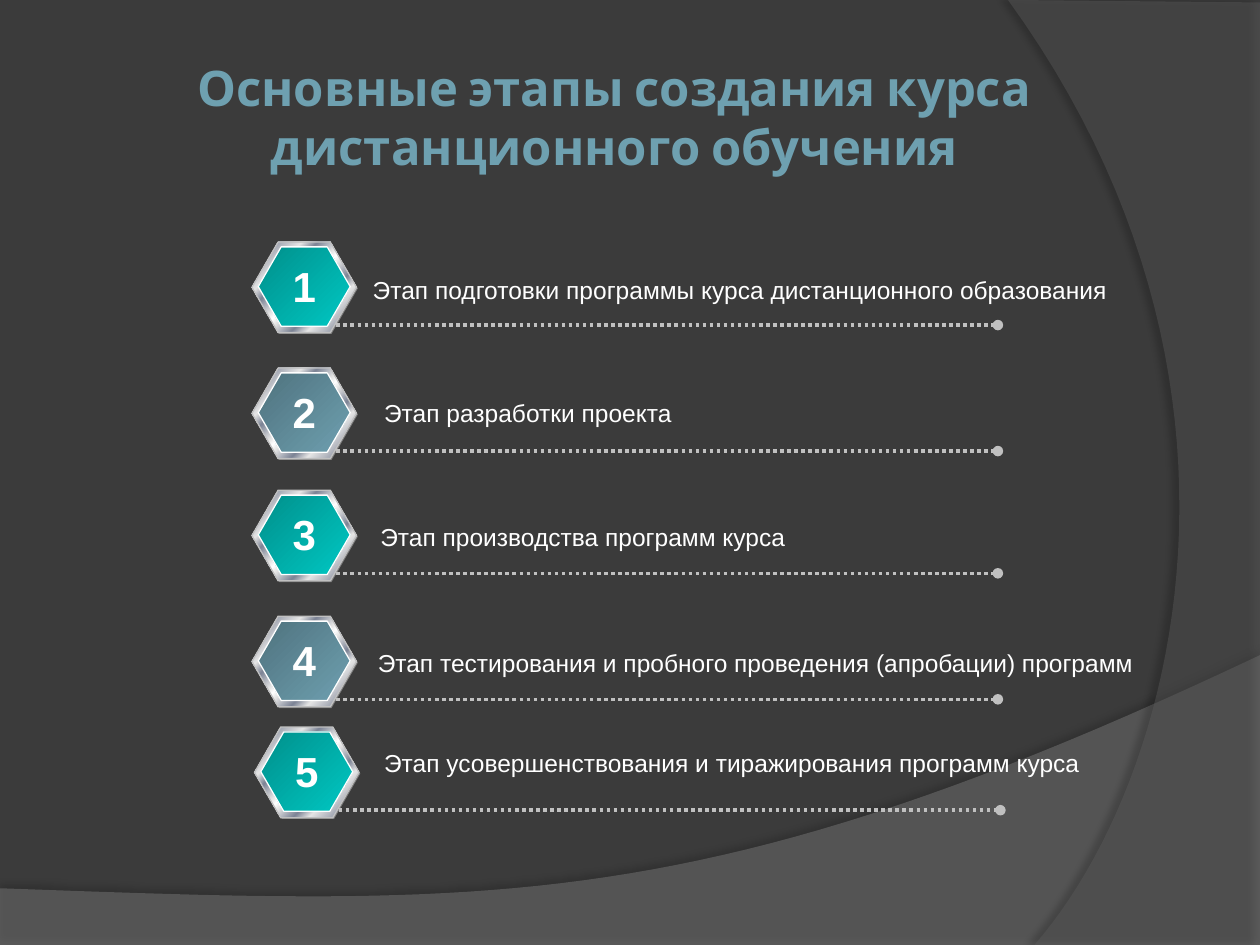
import pptx
import pptx.dml.color
import pptx.enum.dml
import pptx.enum.shapes
import pptx.enum.text
import pptx.oxml
import pptx.oxml.ns
import pptx.util

Inches = pptx.util.Inches
Pt = pptx.util.Pt
RGBColor = pptx.dml.color.RGBColor
PP_ALIGN = pptx.enum.text.PP_ALIGN
qn = pptx.oxml.ns.qn

BACKGROUND = RGBColor(0x3B, 0x3B, 0x3B)
WAVE = RGBColor(0x7F, 0x7F, 0x7F)
ARC = RGBColor(0x5E, 0x5E, 0x5E)
TITLE = RGBColor(0x6E, 0xA0, 0xB0)
WHITE = RGBColor(0xFF, 0xFF, 0xFF)
SILVER = RGBColor(0xC0, 0xC0, 0xC0)
GREY = RGBColor(0x80, 0x80, 0x80)
LIGHT_METAL = RGBColor(0xE6, 0xE6, 0xE6)
DARK_METAL = RGBColor(0x7D, 0x84, 0x96)
METAL = [(0, LIGHT_METAL), (7, DARK_METAL), (26, LIGHT_METAL), (34, DARK_METAL),
         (46, LIGHT_METAL), (50, WHITE), (54, LIGHT_METAL), (66, DARK_METAL),
         (74, LIGHT_METAL), (93, DARK_METAL), (100, LIGHT_METAL)]
TEAL = [(0, RGBColor(0x00, 0x8F, 0x8B)), (100, RGBColor(0x00, 0xC8, 0xC3))]
STEEL = [(0, RGBColor(0x4F, 0x72, 0x7E)), (100, TITLE)]

# left and top of the badge; left, top, width and wrapping of the label; wording
STAGES = [
    ((2, 1.92), (2.86, 2.13, 6.54, True),
     "Этап подготовки программы курса дистанционного образования"),
    ((2, 2.92), (2.95, 3.11, 2.5, False), "Этап разработки проекта"),
    ((2, 3.89), (2.92, 4.09, 3.44, False), "Этап производства программ курса"),
    ((2, 4.89), (2.9, 5.09, 6.24, False),
     "Этап тестирования и пробного проведения (апробации) программ"),
    ((2.02, 5.77), (2.95, 5.89, 5.76, False),
     "Этап усовершенствования и тиражирования программ курса"),
]


def add_xml(parent, tag, **attributes):
    child = pptx.oxml.parse_xml(
        f'<a:{tag} xmlns:a="http://schemas.openxmlformats.org/drawingml/2006/main"/>')
    for key, value in attributes.items():
        child.set(key, str(value))
    parent.append(child)
    return child


def bezier(start, first, second, end, steps=48):
    """Points along a cubic curve, without its start."""
    points = []
    for step in range(1, steps + 1):
        t = step / steps
        weights = ((1 - t) ** 3, 3 * t * (1 - t) ** 2, 3 * t * t * (1 - t), t ** 3)
        points.append(tuple(
            sum(w * c for w, c in zip(weights, axis))
            for axis in zip(start, first, second, end)))
    return points


class StageSlide:
    body_font = "Arial"
    title_font = "Cabin"

    def __init__(self, slide):
        self.slide = slide
        self.shapes = slide.shapes
        slide.background.fill.solid()
        slide.background.fill.fore_color.rgb = BACKGROUND

    def backdrop(self, points, color, opacity, shadow_opacity, distance, direction):
        """Translucent outline with a soft shadow."""
        corners = [(Inches(x), Inches(y)) for x, y in points]
        builder = self.shapes.build_freeform(*corners[0])
        builder.add_line_segments(corners[1:], close=True)
        outline = builder.convert_to_shape()
        outline.fill.solid()
        outline.fill.fore_color.rgb = color
        outline.line.fill.background()
        tint = outline._element.spPr.find(qn("a:solidFill"))[0]
        add_xml(tint, "alpha", val=opacity * 1000)
        outline.shadow.inherit = False
        effects = outline._element.spPr.find(qn("a:effectLst"))
        shadow = add_xml(effects, "outerShdw", blurRad=Pt(4), dist=Pt(distance),
                         dir=direction * 60000, algn="ctr", rotWithShape=0)
        black = add_xml(shadow, "srgbClr", val="000000")
        add_xml(black, "alpha", val=shadow_opacity * 1000)

    def text(self, left, top, width, height, wording, size, color=WHITE, bold=False,
             align=PP_ALIGN.LEFT, font=None, wrap=False):
        box = self.shapes.add_textbox(
            Inches(left), Inches(top), Inches(width), Inches(height))
        frame = box.text_frame
        frame.word_wrap = wrap
        paragraph = frame.paragraphs[0]
        paragraph.text = wording
        paragraph.alignment = align
        paragraph.font.name = font or self.body_font
        paragraph.font.size = Pt(size)
        paragraph.font.bold = bold
        paragraph.font.color.rgb = color
        return frame

    def title(self, wording):
        frame = self.text(0.5, 0.3, 8.75, 1.25, wording, 28, TITLE, True,
                          PP_ALIGN.CENTER, self.title_font, True)
        frame.vertical_anchor = pptx.enum.text.MSO_ANCHOR.MIDDLE
        frame.margin_left = frame.margin_right = Inches(0.05)

    def hexagon(self, group, left, top, width, height, stops=None, line=None):
        """Hexagon with a diagonal gradient, or plain grey without stops."""
        tile = group.shapes.add_shape(
            pptx.enum.shapes.MSO_SHAPE.HEXAGON,
            Inches(left), Inches(top), Inches(width), Inches(height))
        tile.adjustments[0] = 0.289
        tile.shadow.inherit = False
        tile.fill.solid()
        tile.fill.fore_color.rgb = GREY
        if line is None:
            tile.line.fill.background()
        else:
            tile.line.color.rgb = line
            tile.line.width = Pt(0.75)
        if stops:
            properties = tile._element.spPr
            gradient = add_xml(properties, "gradFill", rotWithShape=1)
            stop_list = add_xml(gradient, "gsLst")
            for position, color in stops:
                stop = add_xml(stop_list, "gs", pos=position * 1000)
                add_xml(stop, "srgbClr", val=color)
            add_xml(gradient, "lin", ang=45 * 60000, scaled=0)
            properties.replace(properties.find(qn("a:solidFill")), gradient)

    def badge(self, left, top, stops):
        group = self.shapes.add_group_shape()
        self.hexagon(group, left + 0.01, top + 0.01, 0.83, 0.72)
        self.hexagon(group, left, top, 0.83, 0.72, METAL, SILVER)
        self.hexagon(group, left + 0.05, top + 0.04, 0.73, 0.63, stops, WHITE)

    def dotted_line(self, left, top, length):
        rule = self.shapes.add_connector(
            pptx.enum.shapes.MSO_CONNECTOR.STRAIGHT,
            Inches(left), Inches(top), Inches(left + length), Inches(top))
        rule.line.color.rgb = SILVER
        rule.line.width = Pt(2)
        rule.line.dash_style = pptx.enum.dml.MSO_LINE.ROUND_DOT
        add_xml(rule.line._get_or_add_ln(), "tailEnd", type="oval")
        add_xml(rule._element.spPr, "effectLst")

    def stage(self, number, corner, label, wording):
        left, top = corner
        self.badge(left, top, TEAL if number % 2 else STEEL)
        self.dotted_line(left + 0.67, top + 0.66, 5.25)
        label_left, label_top, label_width, wrap = label
        self.text(label_left, label_top, label_width, 0.34, wording, 14, wrap=wrap)
        self.text(left + 0.22, top + 0.1, 0.39, 0.5, str(number), 24,
                  bold=True, align=PP_ALIGN.CENTER)


def main():
    deck = pptx.Presentation()
    deck.slide_width, deck.slide_height = Inches(10), Inches(7.5)
    page = StageSlide(deck.slides.add_slide(deck.slide_layouts[6]))
    wave = bezier((10, 5.2), (5.59, 7.29), (3.91, 7.19), (0, 7.05))
    page.backdrop([(0, 7.5), (10, 7.5), (10, 5.2)] + wave, WAVE, 45, 35, 3.5, 270)
    arc = bezier((8.21, 7.5), (9.35, 6.19), (10.18, 3), (8, 0))
    page.backdrop([(10, 0.02), (10, 7.5), (8.21, 7.5)] + arc, ARC, 40, 45, 4, 180)
    page.title("Основные этапы создания курса дистанционного обучения")
    for number, (corner, label, wording) in enumerate(STAGES, 1):
        page.stage(number, corner, label, wording)
    deck.save("out.pptx")


if __name__ == "__main__":
    main()
